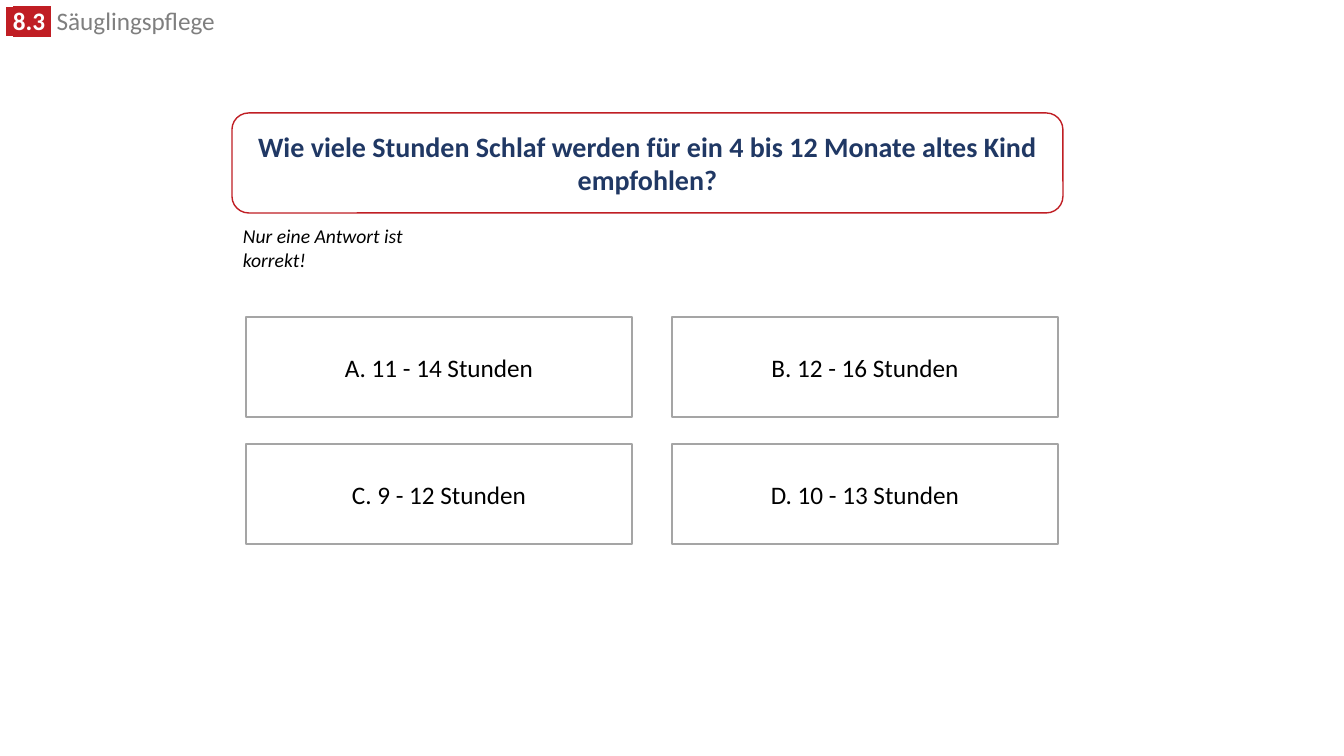
from dataclasses import dataclass

from lxml.etree import SubElement
from pptx import Presentation
from pptx.dml.color import RGBColor
from pptx.enum.shapes import MSO_SHAPE as Preset
from pptx.enum.text import MSO_ANCHOR as Anchor, MSO_AUTO_SIZE as AutoSize, PP_ALIGN as Align
from pptx.oxml.ns import qn
from pptx.util import Pt

EMU_PER_PX = 914400 / 100.8


@dataclass(frozen=True)
class Theme:
    font: str = "Calibri"
    marker_font: str = "Arial"
    white: str = "FFFFFF"
    black: str = "000000"
    red: str = "C01E24"
    navy: str = "203864"
    grey: str = "7F7F7F"
    border: str = "A5A5A5"
    question_size: int = 20
    body_size: int = 18
    note_size: int = 14


def px(*lengths):
    return [round(length * EMU_PER_PX) for length in lengths]


def rgb(colour):
    return RGBColor.from_string(colour)


class QuizSlide:
    def __init__(self, presentation, theme):
        self.theme = theme
        self.slide = presentation.slides.add_slide(presentation.slide_layouts[6])

    def style(self, font, size, colour, bold=False, italic=False):
        font.name = self.theme.font
        font.size = Pt(size)
        font.color.rgb = rgb(colour)
        font.bold = bold
        font.italic = italic

    def text_box(self, box):
        frame = self.slide.shapes.add_textbox(*px(*box)).text_frame
        frame.word_wrap = True
        frame.auto_size = AutoSize.SHAPE_TO_FIT_TEXT
        return frame.paragraphs[0]

    def highlight(self, run, colour):
        """Mark a run whose font colour is already set."""
        properties = run.font._element if hasattr(run.font, "_element") else run._r.get_or_add_rPr()
        mark = SubElement(properties, qn("a:highlight"))
        SubElement(mark, qn("a:srgbClr"), val=colour)
        properties.find(qn("a:solidFill")).addnext(mark)

    def chapter(self, box, number, title):
        theme = self.theme
        heading = self.text_box(box)
        heading.line_spacing = 0.8
        for text, face, colour, marked in (
            (" ", theme.marker_font, theme.white, True),
            (f"{number} ", theme.font, theme.white, True),
            (f" {title}", theme.font, theme.grey, False),
        ):
            run = heading.add_run()
            run.text = text
            self.style(run.font, theme.body_size, colour, bold=marked)
            run.font.name = face
            if marked:
                self.highlight(run, theme.red)

    def note(self, box, text):
        hint = self.text_box(box)
        hint.text = text
        self.style(hint.font, self.theme.note_size, self.theme.black, italic=True)

    def panel(self, preset, box, text, border, width, size, colour, bold=False):
        panel = self.slide.shapes.add_shape(preset, *px(*box))
        panel.shadow.inherit = False
        panel.fill.solid()
        panel.fill.fore_color.rgb = rgb(self.theme.white)
        panel.line.color.rgb = rgb(border)
        panel.line.width = Pt(width)
        frame = panel.text_frame
        frame.word_wrap = True
        frame.vertical_anchor = Anchor.MIDDLE
        label = frame.paragraphs[0]
        label.text = text
        label.alignment = Align.CENTER
        self.style(label.font, size, colour, bold)

    def question(self, box, text):
        theme = self.theme
        self.panel(Preset.ROUNDED_RECTANGLE, box, text, theme.red, 1,
                   theme.question_size, theme.navy, bold=True)

    def answer(self, box, text):
        theme = self.theme
        self.panel(Preset.RECTANGLE, box, text, theme.border, 2, theme.body_size, theme.black)


def main():
    presentation = Presentation()
    presentation.slide_width, presentation.slide_height = px(1344, 756)
    quiz = QuizSlide(presentation, Theme())

    quiz.chapter((-4, 6, 278, 34), "8.3", "Säuglingspflege")
    quiz.question((232, 113, 831, 100),
                  "Wie viele Stunden Schlaf werden für ein 4 bis 12 Monate altes Kind empfohlen?")
    quiz.note((233, 219, 238, 57), "Nur eine Antwort ist korrekt!")

    hours = ("11 - 14", "12 - 16", "9 - 12", "10 - 13")
    for index, (letter, span) in enumerate(zip("ABCD", hours)):
        row, column = divmod(index, 2)
        quiz.answer((246 + 426 * column, 317 + 127 * row, 386, 100), f"{letter}. {span} Stunden")

    presentation.save("out.pptx")


if __name__ == "__main__":
    main()
